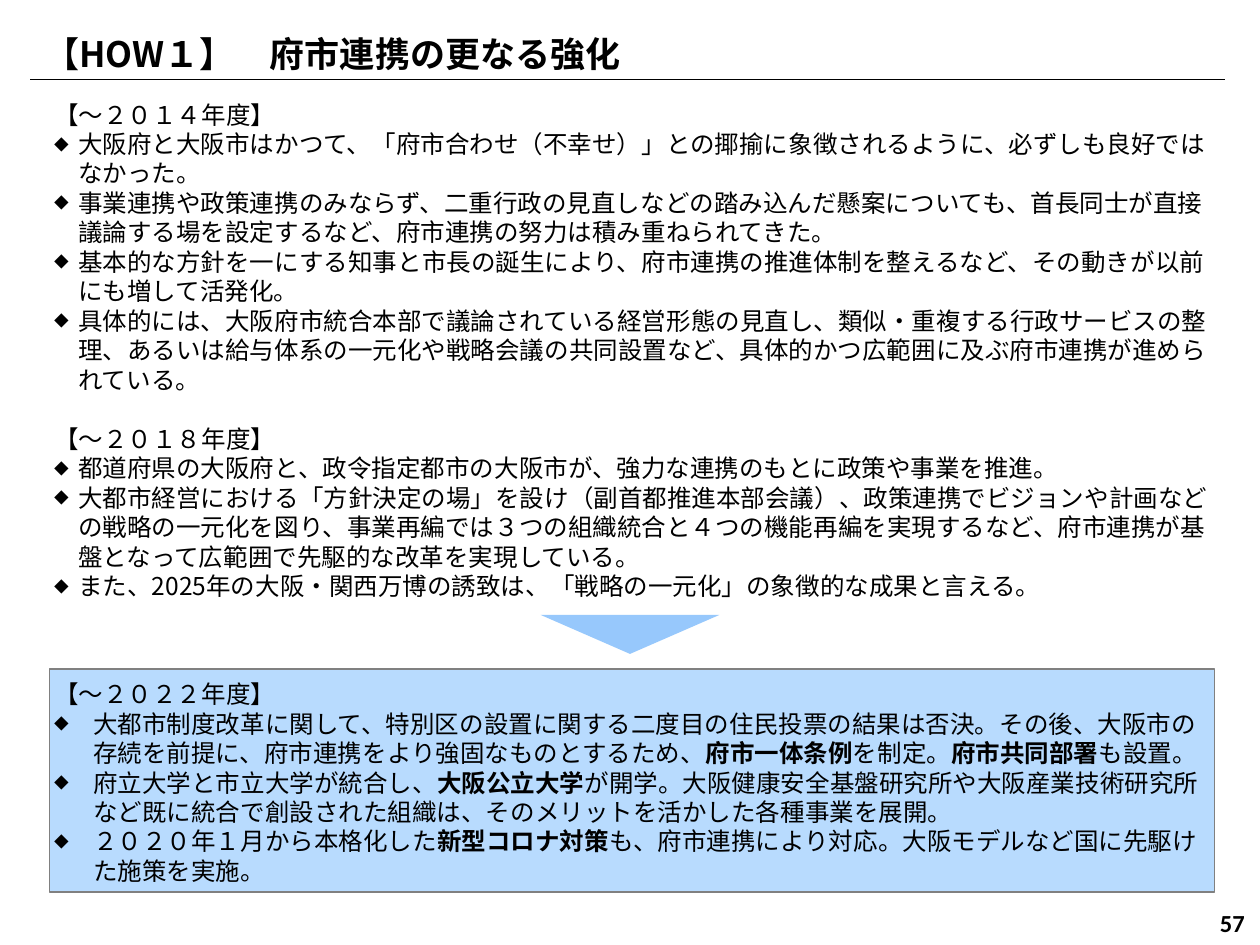
from dataclasses import dataclass

from lxml import etree
from pptx import Presentation
from pptx import util as u
from pptx.dml.color import RGBColor
from pptx.enum import shapes, text
from pptx.oxml.ns import qn


@dataclass(frozen=True)
class Theme:
    ink: str = "000000"
    panel: str = "B8DBFE"
    panel_edge: str = "808080"
    arrow: str = "97C8FC"
    japanese: str = "Noto Sans CJK JP"
    latin: str = "Calibri"
    title_size: float = 20
    body_size: float = 14
    title_pitch: float = 25
    body_pitch: float = 16.85
    inset: float = 0.04


THEME = Theme()
WIDTH, HEIGHT = 10, 7.5
LEFT, COLUMN = 0.39, 9.25  # shared by the history text and the panel

# Content: a heading and its points; ** marks bold wording
UNTIL_2014 = ("【～２０１４年度】", [
    "大阪府と大阪市はかつて、「府市合わせ（不幸せ）」との揶揄に象徴されるように、必ずしも良好ではなかった。",
    "事業連携や政策連携のみならず、二重行政の見直しなどの踏み込んだ懸案についても、首長同士が直接議論する場を設定するなど、"
    "府市連携の努力は積み重ねられてきた。",
    "基本的な方針を一にする知事と市長の誕生により、府市連携の推進体制を整えるなど、その動きが以前にも増して活発化。",
    "具体的には、大阪府市統合本部で議論されている経営形態の見直し、類似・重複する行政サービスの整理、あるいは給与体系の一元化や"
    "戦略会議の共同設置など、具体的かつ広範囲に及ぶ府市連携が進められている。",
])
UNTIL_2018 = ("【～２０１８年度】", [
    "都道府県の大阪府と、政令指定都市の大阪市が、強力な連携のもとに政策や事業を推進。",
    "大都市経営における「方針決定の場」を設け（副首都推進本部会議）、政策連携でビジョンや計画などの戦略の一元化を図り、"
    "事業再編では３つの組織統合と４つの機能再編を実現するなど、府市連携が基盤となって広範囲で先駆的な改革を実現している。",
    "また、2025年の大阪・関西万博の誘致は、「戦略の一元化」の象徴的な成果と言える。",
])
UNTIL_2022 = ("【～２０２２年度】", [
    "大都市制度改革に関して、特別区の設置に関する二度目の住民投票の結果は否決。その後、大阪市の存続を前提に、"
    "府市連携をより強固なものとするため、**府市一体条例**を制定。**府市共同部署**も設置。",
    "府立大学と市立大学が統合し、**大阪公立大学**が開学。大阪健康安全基盤研究所や大阪産業技術研究所など"
    "既に統合で創設された組織は、そのメリットを活かした各種事業を展開。",
    "２０２０年１月から本格化した**新型コロナ対策**も、府市連携により対応。大阪モデルなど国に先駆けた施策を実施。",
])


def write(paragraph, wording, *, font=THEME.japanese, size=THEME.body_size, bold=False,
          align=text.PP_ALIGN.LEFT, pitch=None, before=0, indent=0):
    """Fill a paragraph; an indent also gives it a diamond bullet."""
    paragraph.alignment = align
    paragraph.space_before = u.Pt(before)
    if pitch:
        paragraph.line_spacing = u.Pt(pitch)
    for index, part in enumerate(wording.split("**")):
        run = paragraph.add_run()
        run.text = part
        run.font.name = font
        run.font.size = u.Pt(size)
        run.font.bold = bold or index % 2 == 1
        run.font.color.rgb = RGBColor.from_string(THEME.ink)
        east_asian = etree.Element(qn("a:ea"), typeface=font)
        run.font._element.find(qn("a:latin")).addnext(east_asian)
    if indent:
        properties = paragraph._p.get_or_add_pPr()
        properties.set("marL", str(u.Inches(indent)))
        properties.set("indent", str(-u.Inches(indent)))
        etree.SubElement(properties, qn("a:buSzPct"), val="60000")
        etree.SubElement(properties, qn("a:buFont"), typeface=font)
        etree.SubElement(properties, qn("a:buChar"), char="◆")


class Page:
    """The current slide; lengths are shares of its width and height."""

    def __init__(self, deck, theme):
        self.deck, self.theme = deck, theme
        self.slide = deck.slides.add_slide(deck.slide_layouts[5])

    def place(self, left, top, width, height):
        across, down = self.deck.slide_width, self.deck.slide_height
        return [int(length) for length in
                (left * across, top * down, width * across, height * down)]

    def frame(self, shape, top_inset=None, anchor=text.MSO_ANCHOR.TOP, wrap=True):
        frame = shape.text_frame
        frame.word_wrap = wrap
        frame.auto_size = text.MSO_AUTO_SIZE.NONE
        frame.vertical_anchor = anchor
        inset = u.Inches(self.theme.inset)
        frame.margin_left = frame.margin_right = frame.margin_bottom = inset
        frame.margin_top = inset if top_inset is None else u.Inches(top_inset)
        return frame

    def title(self, wording, *area):
        heading = self.slide.shapes.title
        heading.left, heading.top, heading.width, heading.height = self.place(*area)
        frame = self.frame(heading, wrap=False)
        write(frame.paragraphs[0], wording, size=self.theme.title_size, bold=True,
              pitch=self.theme.title_pitch)

    def rule(self, left, right, level):
        x, y, length, _ = self.place(left, level, right - left, 0)
        line = self.slide.shapes.add_connector(
            shapes.MSO_CONNECTOR.STRAIGHT, x, y, x + length, y)
        line.line.color.rgb = RGBColor.from_string(self.theme.ink)
        line.line.width = u.Pt(0.5)
        etree.SubElement(line._element.spPr, qn("a:effectLst"))

    def box(self, *area):
        return self.slide.shapes.add_textbox(*self.place(*area))

    def block(self, preset, fill, *area, edge=None):
        block = self.slide.shapes.add_shape(preset, *self.place(*area))
        block.shadow.inherit = False
        block.fill.solid()
        block.fill.fore_color.rgb = RGBColor.from_string(fill)
        if edge:
            block.line.color.rgb = RGBColor.from_string(edge)
            block.line.width = u.Pt(0.75)
        else:
            block.line.fill.background()
        return block

    def periods(self, shape, periods, indent, top_inset=None):
        frame = self.frame(shape, top_inset)
        pitch = self.theme.body_pitch
        for order, (heading, points) in enumerate(periods):
            first = frame.add_paragraph() if order else frame.paragraphs[0]
            write(first, heading, pitch=pitch, before=pitch if order else 0)
            for point in points:
                write(frame.add_paragraph(), point, pitch=pitch, indent=indent)

    def number(self, wording, *area):
        frame = self.frame(self.box(*area), anchor=text.MSO_ANCHOR.MIDDLE)
        write(frame.paragraphs[0], wording, font=self.theme.latin, bold=True,
              align=text.PP_ALIGN.RIGHT)


def share(left, top, width, height):
    return left / WIDTH, top / HEIGHT, width / WIDTH, height / HEIGHT


def main():
    deck = Presentation()
    deck.slide_width, deck.slide_height = u.Inches(WIDTH), u.Inches(HEIGHT)
    page = Page(deck, THEME)

    # Heading
    page.title("【HOW１】　府市連携の更なる強化", *share(0.31, 0.2, 9.49, 0.47))
    page.rule(0.24 / WIDTH, 9.72 / WIDTH, 0.63 / HEIGHT)

    # Earlier periods
    history = page.box(*share(LEFT, 0.75, COLUMN, 4.13))
    page.periods(history, [UNTIL_2014, UNTIL_2018], indent=0.19)

    # Latest period, with the arrow leading to it
    panel = page.block(shapes.MSO_SHAPE.RECTANGLE, THEME.panel,
                       *share(LEFT, 5.31, COLUMN, 1.77), edge=THEME.panel_edge)
    page.periods(panel, [UNTIL_2022], indent=0.31, top_inset=0.08)
    page.block(shapes.MSO_SHAPE.FLOWCHART_MERGE, THEME.arrow,
               *share(4.29, 4.88, 1.42, 0.31))

    # Page number
    page.number("57", *share(9.45, 7.17, 0.47, 0.31))
    deck.save("out.pptx")


if __name__ == "__main__":
    main()
